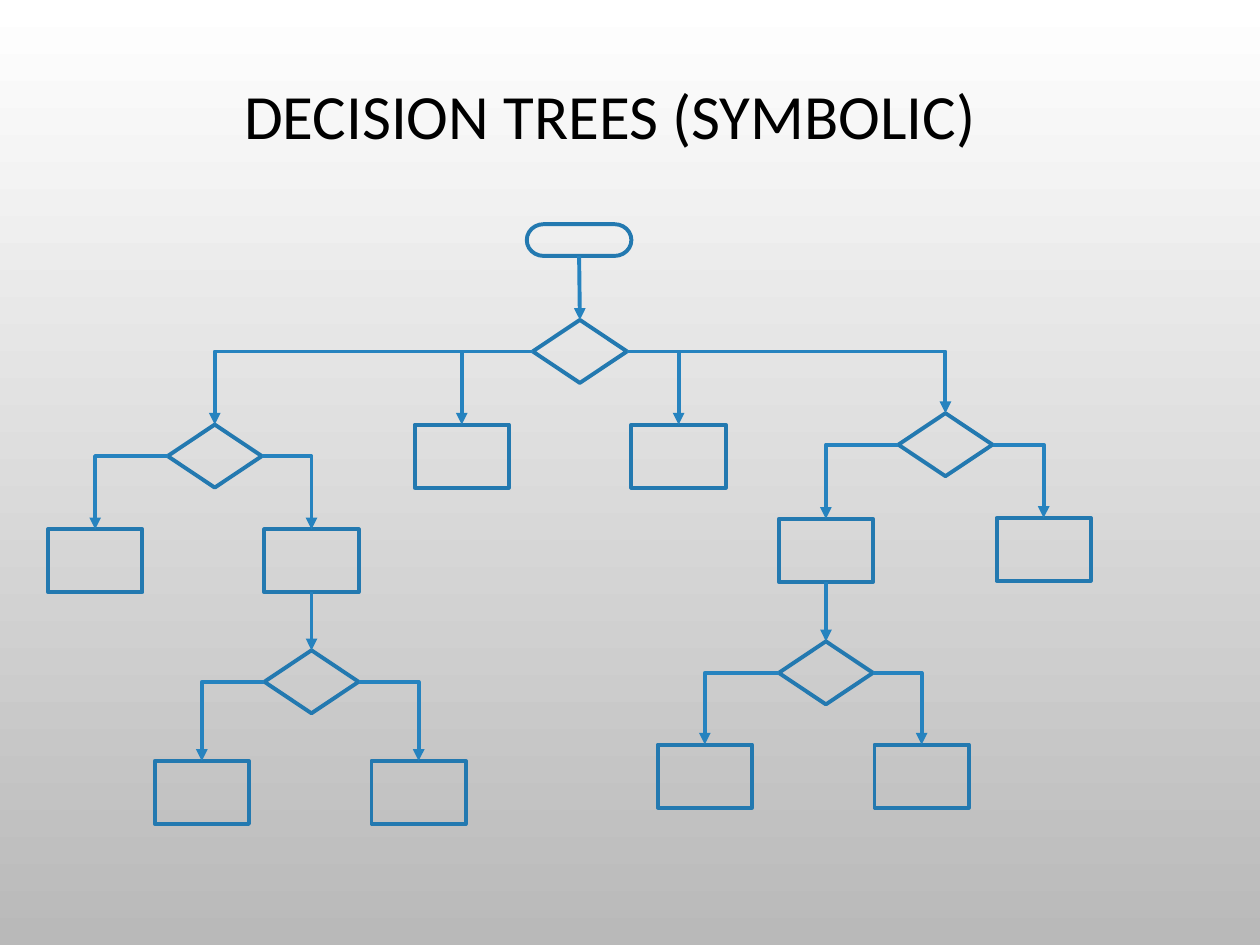
from lxml import etree
from pptx import Presentation
from pptx import util as u
from pptx.dml.color import RGBColor
from pptx.enum import shapes, text
from pptx.oxml.ns import qn

COLORS = {"top": "FFFFFF", "bottom": "B9B9B9", "node": "2379B0", "link": "2683BF", "title": "000000"}
TITLE = "DECISION TREES (SYMBOLIC)"
TITLE_BOX = {"left": 1.5, "top": 0.18, "width": 21.59, "height": 4.44}
LINE_WIDTH = u.Pt(2.25)
KINDS = {
    "start": (shapes.MSO_SHAPE.FLOWCHART_TERMINATOR, 2.11, 0.64),
    "decision": (shapes.MSO_SHAPE.FLOWCHART_DECISION, 1.9, 1.27),
    "process": (shapes.MSO_SHAPE.FLOWCHART_PROCESS, 1.9, 1.27),
}
NODES = {
    "start": ("start", 10.62, 4.52),
    "root": ("decision", 10.74, 6.45),
    "inner left": ("process", 8.36, 8.56),
    "inner right": ("process", 12.73, 8.56),
    "right": ("decision", 18.11, 8.33),
    "right yes": ("process", 15.7, 10.46),
    "right no": ("process", 20.09, 10.44),
    "left": ("decision", 3.38, 8.56),
    "left yes": ("process", 0.97, 10.67),
    "left no": ("process", 5.33, 10.67),
    "lower left": ("decision", 5.33, 13.11),
    "lower left yes": ("process", 3.12, 15.34),
    "lower left no": ("process", 7.49, 15.34),
    "lower right": ("decision", 15.7, 12.93),
    "lower right yes": ("process", 13.26, 15.01),
    "lower right no": ("process", 17.63, 15.01),
}
STEPS = [("start", "root"), ("left no", "lower left"), ("right yes", "lower right")]
BRANCHES = {
    "root": (["inner left", "left"], ["inner right", "right"]),
    "left": (["left yes"], ["left no"]),
    "right": (["right yes"], ["right no"]),
    "lower left": (["lower left yes"], ["lower left no"]),
    "lower right": (["lower right yes"], ["lower right no"]),
}
TOP, LEFT, BOTTOM, RIGHT = range(4)


def rgb(name):
    return RGBColor.from_string(COLORS[name])


def apply(obj, values):
    for key, value in values.items():
        setattr(obj, key, value)


def add_title(s):
    sp = s.shapes.title
    apply(sp, {k: u.Cm(v) for k, v in TITLE_BOX.items()})
    tf = sp.text_frame
    apply(tf, {"auto_size": text.MSO_AUTO_SIZE.NONE, "word_wrap": True,
               "vertical_anchor": text.MSO_ANCHOR.MIDDLE})
    p = tf.paragraphs[0]
    apply(p, {"alignment": text.PP_ALIGN.CENTER, "line_spacing": 0.9})
    r = p.add_run()
    r.text = TITLE
    apply(r.font, {"name": "Calibri", "size": u.Pt(36)})
    r.font.color.rgb = rgb("title")


def add_node(s, kind, left, top):
    preset, width, height = KINDS[kind]
    sp = s.shapes.add_shape(preset, *map(u.Cm, (left, top, width, height)))
    sp.shadow.inherit = False
    sp.fill.background()
    sp.line.color.rgb = rgb("node")
    sp.line.width = LINE_WIDTH
    return sp


def add_link(s, begin, side, end):
    straight = side == BOTTOM
    kind = shapes.MSO_CONNECTOR.STRAIGHT if straight else shapes.MSO_CONNECTOR.ELBOW
    cxn = s.shapes.add_connector(kind, 0, 0, 0, 0)
    cxn.begin_connect(begin, side)
    cxn.end_connect(end, TOP)
    cxn.line.color.rgb = rgb("link")
    cxn.line.width = LINE_WIDTH
    pr = cxn._element.spPr
    if not straight:
        pr.find(qn("a:prstGeom")).set("prst", "bentConnector2")
    etree.SubElement(pr.find(qn("a:ln")), qn("a:tailEnd"), type="triangle")
    etree.SubElement(pr, qn("a:effectLst"))


def main():
    """Build the decision tree slide."""
    prs = Presentation()
    apply(prs, {"slide_width": u.Cm(25.4), "slide_height": u.Cm(19.05)})
    s = prs.slides.add_slide(prs.slide_layouts[5])
    fill = s.background.fill
    fill.gradient()
    fill.gradient_angle = 270
    for stop, name in zip(fill.gradient_stops, ("top", "bottom")):
        stop.color.rgb = rgb(name)
    add_title(s)
    nodes = {name: add_node(s, *node) for name, node in NODES.items()}
    for begin, end in STEPS:
        add_link(s, nodes[begin], BOTTOM, nodes[end])
    for begin, sides in BRANCHES.items():
        for side, ends in zip((LEFT, RIGHT), sides):
            for end in ends:
                add_link(s, nodes[begin], side, nodes[end])
    prs.save("out.pptx")


if __name__ == "__main__":
    main()
